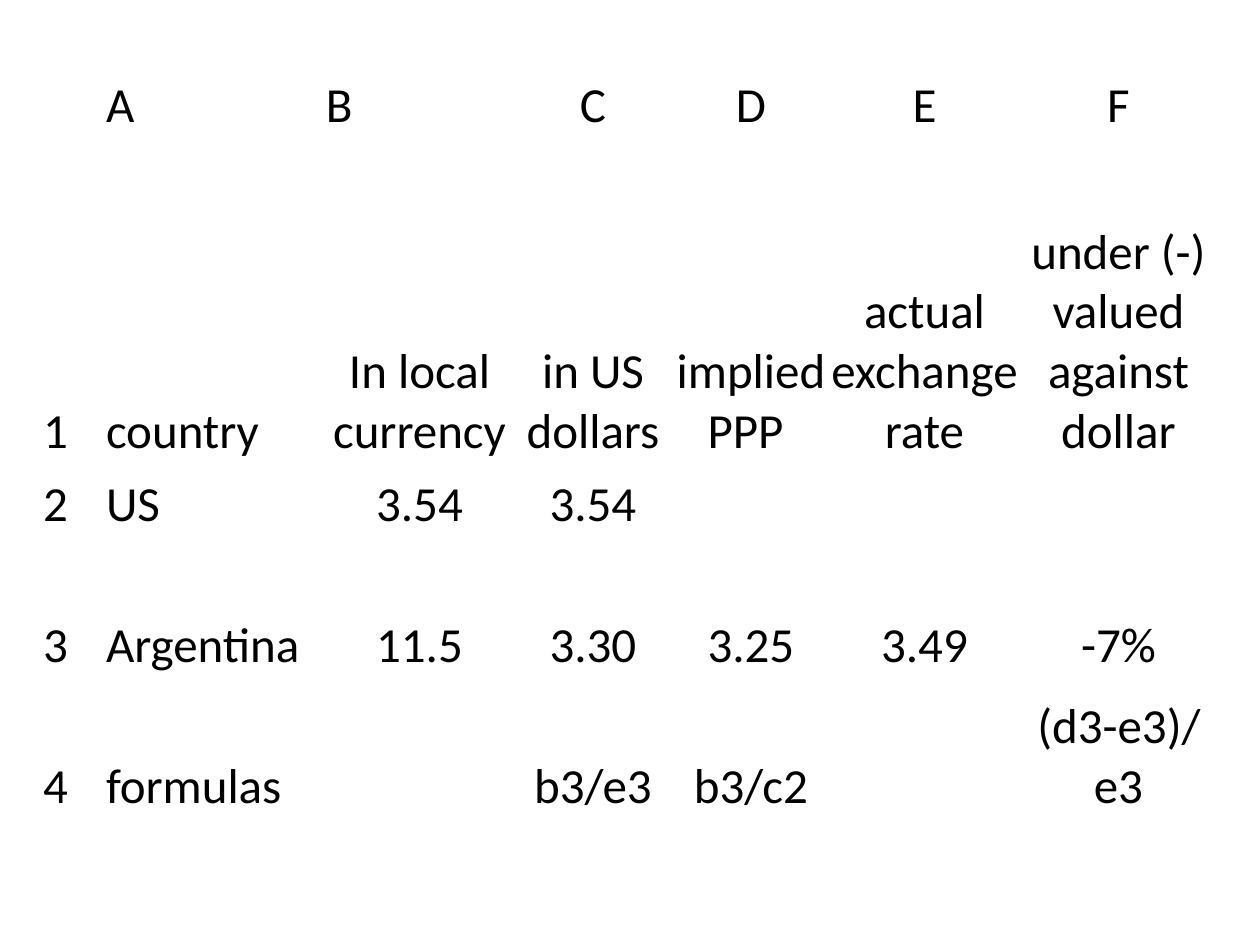
from dataclasses import dataclass

from pptx import Presentation
from pptx.dml.color import RGBColor
from pptx.enum.text import MSO_ANCHOR, PP_ALIGN
from pptx.slide import Slide
from pptx.util import Pt

EMU_PER_PX = 914400 / 126
BLACK = RGBColor(0x00, 0x00, 0x00)

COLUMN_WIDTHS = [63, 220, 189, 158, 158, 189, 199]
ROW_HEIGHTS = [73, 326, 73, 141, 141, 73]
LABEL_COLUMNS = 2
PRICE_COMPARISON = [
    ["", "A", "B", "C", "D", "E", "F"],
    ["1", "country", "In local currency", "in US dollars", "implied PPP ",
     "actual exchange rate", "under (-) valued against dollar"],
    ["2", "US", "3.54", "3.54", "", "", ""],
    ["3", "Argentina", "11.5", "3.30", "3.25", "3.49", "-7%"],
    ["4", "formulas", "", "b3/e3", "b3/c2", "", "(d3-e3)/e3"],
    [""] * 7,
]


def px(length):
    return round(length * EMU_PER_PX)


@dataclass
class SheetSlide:
    """Draws spreadsheet cells on one slide in a single text style."""

    slide: Slide
    font: str = "Calibri"
    size: int = 28
    color: RGBColor = BLACK

    def cell(self, cell, text, align):
        cell.fill.background()
        cell.vertical_anchor = MSO_ANCHOR.BOTTOM
        cell.margin_left = cell.margin_right = cell.margin_top = px(1)
        cell.margin_bottom = 0
        if not text:
            return
        paragraph = cell.text_frame.paragraphs[0]
        paragraph.alignment = align
        run = paragraph.add_run()
        run.text = text
        run.font.name = self.font
        run.font.size = Pt(self.size)
        run.font.color.rgb = self.color

    def table(self, left, top, widths, heights, rows):
        sheet = self.slide.shapes.add_table(
            len(heights), len(widths), px(left), px(top),
            px(sum(widths)), px(sum(heights))).table
        sheet.first_row = sheet.horz_banding = False
        for column, width in zip(sheet.columns, widths):
            column.width = px(width)
        for row, height in zip(sheet.rows, heights):
            row.height = px(height)
        for r, values in enumerate(rows):
            for c, value in enumerate(values):
                left_aligned = c < LABEL_COLUMNS or value == "B"
                align = PP_ALIGN.LEFT if left_aligned else PP_ALIGN.CENTER
                self.cell(sheet.cell(r, c), value, align)


def main():
    deck = Presentation()
    deck.slide_width, deck.slide_height = px(1260), px(945)
    page = SheetSlide(deck.slides.add_slide(deck.slide_layouts[6]))
    page.table(42, 63, COLUMN_WIDTHS, ROW_HEIGHTS, PRICE_COMPARISON)
    deck.save("out.pptx")


if __name__ == "__main__":
    main()
